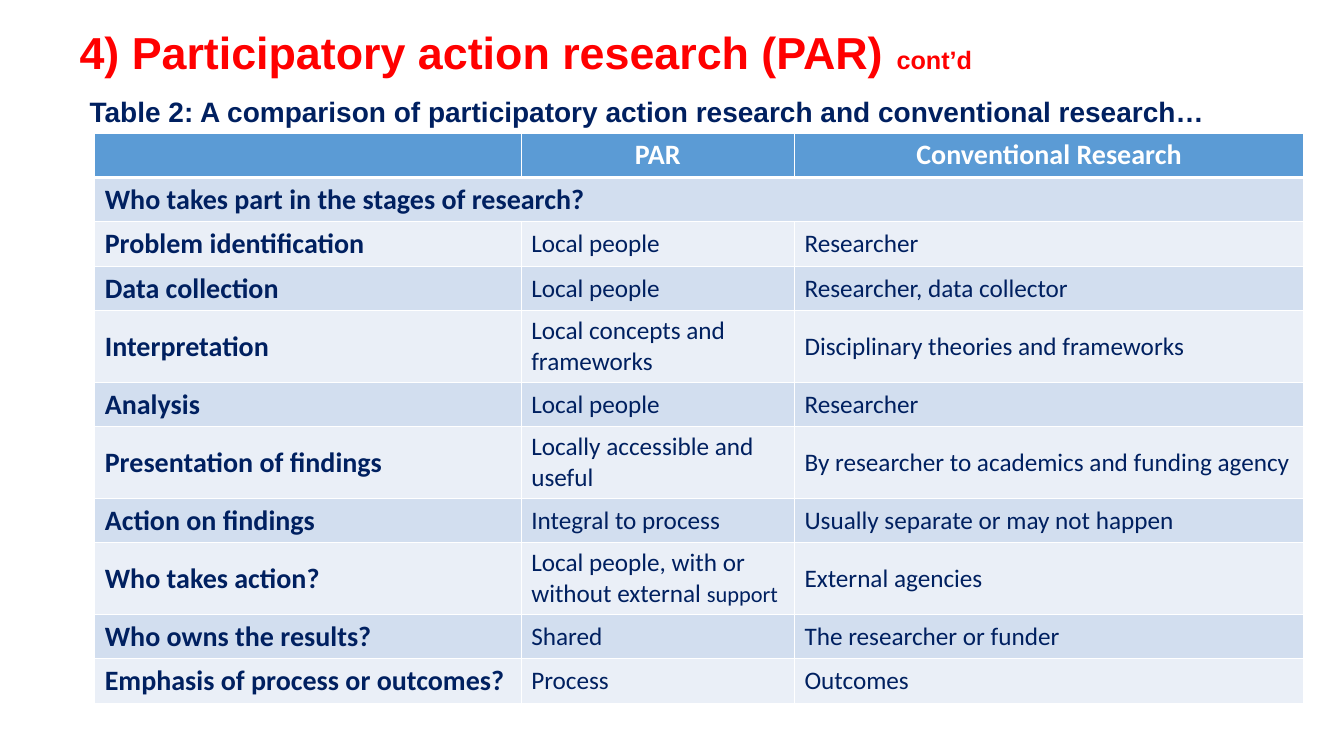
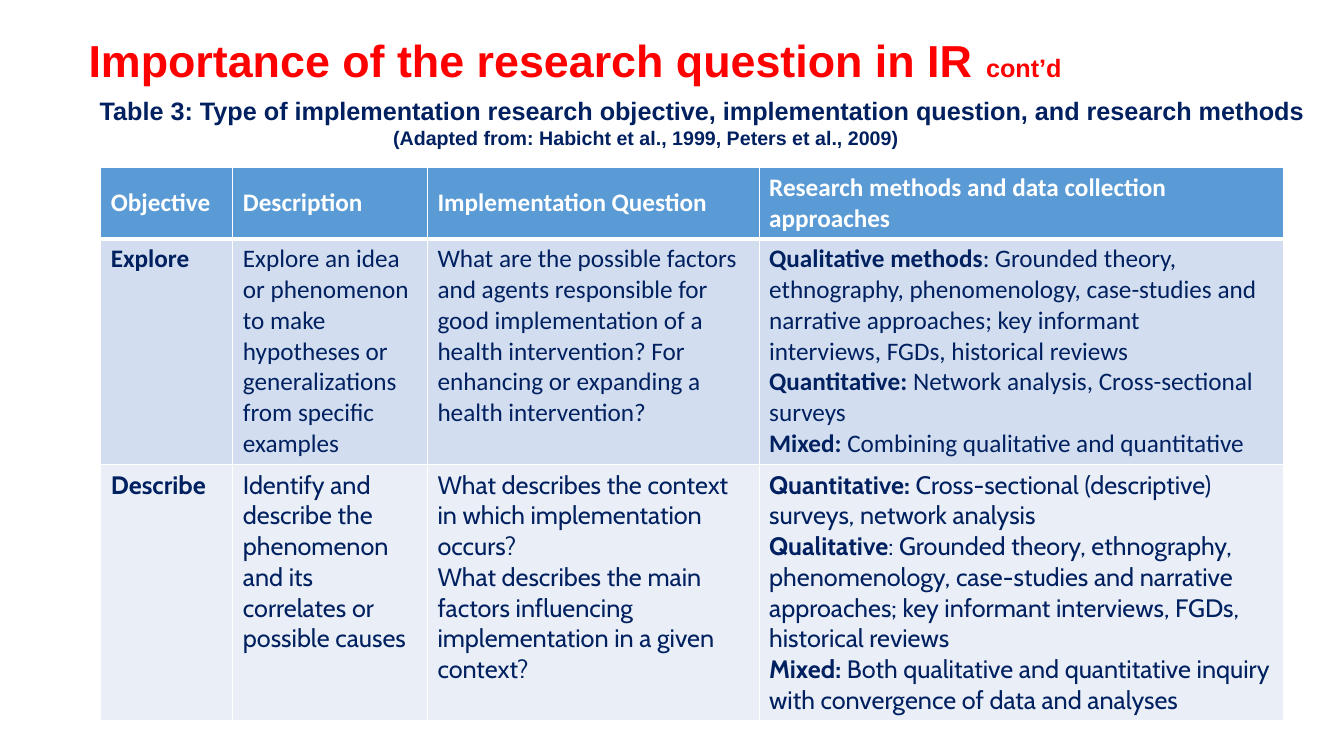
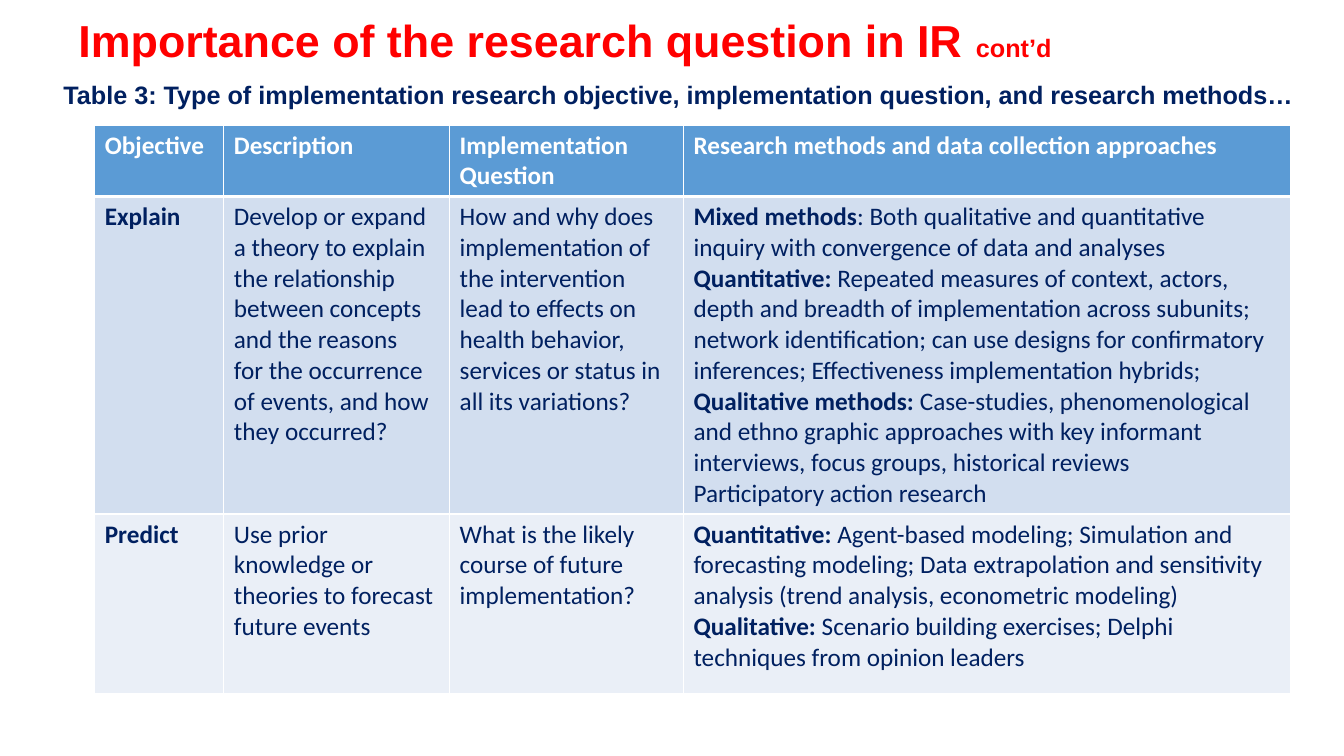
from dataclasses import dataclass, replace

from lxml import etree
from pptx import Presentation, util as u
from pptx.dml.color import RGBColor
from pptx.enum import text as t
from pptx.oxml.ns import qn


@dataclass(frozen=True)
class Style:
    size: float
    color: str
    font: str = "Calibri"
    bold: bool = False


class Theme:
    width, height = 13.33, 7.5
    white, navy, red = "FFFFFF", "002060", "FF0000"
    header_fill, bands = "5B9BD5", ("D2DEEF", "EAEFF7")
    thin, thick = 1, 3
    line_spacing = 0.9
    title = Style(32, red, "Arial", True)
    contd = replace(title, size=18)
    caption = Style(18, navy, "Arial", True)
    large_caption = replace(caption, size=20)
    source = replace(caption, size=14)
    header = Style(18, white, bold=True)
    large_header = replace(header, size=20)
    body = Style(18, navy)
    strong = replace(body, bold=True)
    stage = replace(strong, size=20)
    small = replace(body, size=16)


@dataclass(frozen=True)
class Box:
    left: float
    top: float
    width: float
    height: float

    def place(self):
        across, down = Theme.width / 100, Theme.height / 100
        return [u.Inches(length) for length in (
            self.left * across, self.top * down,
            self.width * across, self.height * down)]


def write(paragraph, content, style, marked=None):
    for i, span in enumerate(content.split("|")):
        look = marked if i % 2 else style
        for j, line in enumerate(span.split("\v")):
            if j:
                paragraph.add_line_break()
            if line:
                run = paragraph.add_run()
                run.text = line
                run.font.name, run.font.size = look.font, u.Pt(look.size)
                run.font.bold = look.bold
                run.font.color.rgb = RGBColor.from_string(look.color)


def add_text(slide, box, anchor):
    frame = slide.shapes.add_textbox(*box.place()).text_frame
    frame.word_wrap = True
    frame.vertical_anchor = anchor
    frame.paragraphs[0].line_spacing = Theme.line_spacing
    return frame


def add_title(slide, box, heading):
    frame = add_text(slide, box, t.MSO_ANCHOR.MIDDLE)
    write(frame.paragraphs[0], heading + " |cont’d", Theme.title, Theme.contd)


def add_caption(slide, box, caption, style=Theme.caption, source=None):
    frame = add_text(slide, box, t.MSO_ANCHOR.TOP)
    write(frame.paragraphs[0], caption, style)
    if source:
        credit = frame.add_paragraph()
        credit.line_spacing = Theme.line_spacing
        credit.space_before = u.Pt(2)
        credit._p.get_or_add_pPr().set("marL", str(u.Inches(2.91)))
        write(credit, source, Theme.source)


def paint_cell(cell, row):
    properties = cell._tc.get_or_add_tcPr()
    heavy = {0: "lnB", 1: "lnT"}.get(row)
    for side in ("lnL", "lnR", "lnT", "lnB"):
        points = Theme.thick if side == heavy else Theme.thin
        line = etree.SubElement(properties, qn("a:" + side), w=str(u.Pt(points)))
        fill = etree.SubElement(line, qn("a:solidFill"))
        etree.SubElement(fill, qn("a:srgbClr"), val=Theme.white)
    color = Theme.bands[(row - 1) % 2] if row else Theme.header_fill
    cell.fill.solid()
    cell.fill.fore_color.rgb = RGBColor.from_string(color)


def add_grid(slide, box, columns, heights, rows, style_of, anchor_of):
    frame = slide.shapes.add_table(len(rows), len(columns), *box.place())
    grid = frame.table
    grid.horz_banding = False
    for column, width in zip(grid.columns, columns):
        column.width = u.Inches(width)
    for row, height in zip(grid.rows, heights):
        row.height = u.Inches(height)
    for r, entries in enumerate(rows):
        for c in range(len(columns)):
            cell = grid.cell(r, c)
            paint_cell(cell, r)
            cell.vertical_anchor = anchor_of(r)
            if c < len(entries):
                style, marked = style_of(r, c)
                for i, part in enumerate(entries[c].split("\n")):
                    frame = cell.text_frame
                    paragraph = frame.add_paragraph() if i else frame.paragraphs[0]
                    write(paragraph, part, style, marked)
    return grid


def add_comparison(slide, box, columns, rows):
    def style_of(r, c):
        if r == 0:
            return Theme.large_header, None
        return (Theme.body if c else Theme.stage), Theme.small

    two_line_rows = (4, 6, 8)
    heights = [0.71 if r in two_line_rows else 0.44 for r in range(len(rows))]
    grid = add_grid(slide, box, columns, heights, rows, style_of,
                    lambda r: t.MSO_ANCHOR.MIDDLE if r else t.MSO_ANCHOR.TOP)
    for c in range(len(columns)):
        grid.cell(0, c).text_frame.paragraphs[0].alignment = t.PP_ALIGN.CENTER
    grid.cell(1, 0).merge(grid.cell(1, len(columns) - 1))


def add_objectives(slide, box, columns, heights, rows,
                   header_anchor=t.MSO_ANCHOR.TOP, last_font="Calibri"):
    def style_of(r, c):
        if r == 0:
            return Theme.header, None
        font = last_font if r == len(rows) else Theme.body.font
        strong = replace(Theme.strong, font=font)
        return (replace(Theme.body, font=font) if c else strong), strong

    add_grid(slide, box, columns, heights, [OBJECTIVE_HEADER] + rows, style_of,
             lambda r: t.MSO_ANCHOR.TOP if r else header_anchor)


COMPARISON = [
    ("", "PAR", "Conventional Research"),
    ("Who takes part in the stages of research?",),
    ("Problem identification", "Local people", "Researcher"),
    ("Data collection", "Local people", "Researcher, data collector"),
    ("Interpretation", "Local concepts and frameworks",
     "Disciplinary theories and frameworks"),
    ("Analysis", "Local people", "Researcher"),
    ("Presentation of findings", "Locally accessible and useful",
     "By researcher to academics and funding agency"),
    ("Action on findings", "Integral to process",
     "Usually separate or may not happen"),
    ("Who takes action?", "Local people, with or without external |support",
     "External agencies"),
    ("Who owns the results?", "Shared", "The researcher or funder"),
    ("Emphasis of process or outcomes?", "Process", "Outcomes"),
]

OBJECTIVE_HEADER = ("Objective", "Description", "Implementation Question",
                    "Research methods and data collection approaches")

EXPLORE_DESCRIBE = [
    ("Explore",
     "Explore an idea or phenomenon to make hypotheses or generalizations "
     "from specific examples",
     "What are the possible factors and agents responsible for good "
     "implementation of a\vhealth intervention? For enhancing or expanding a "
     "health intervention?",
     "|Qualitative methods|: Grounded theory, ethnography, phenomenology, "
     "case-studies and narrative approaches; key informant\vinterviews, FGDs, "
     "historical reviews\n"
     "|Quantitative: |Network analysis, Cross-sectional surveys\n"
     "|Mixed: |Combining qualitative and quantitative"),
    ("Describe",
     "Identify and describe the phenomenon and its correlates or possible causes",
     "What describes the context in which implementation occurs?\n"
     "What describes the main factors influencing implementation in a given "
     "context?",
     "|Quantitative:| Cross-sectional (descriptive) surveys, network analysis\n"
     "|Qualitative|: Grounded theory, ethnography, phenomenology, case-studies "
     "and narrative approaches; key informant interviews, FGDs, historical "
     "reviews\n"
     "|Mixed:| Both qualitative and quantitative inquiry with convergence of "
     "data and analyses"),
]

EXPLAIN_PREDICT = [
    ("Explain",
     "Develop or expand\va theory to explain\vthe relationship\vbetween "
     "concepts\vand the reasons\vfor the occurrence\vof events, and how\v"
     "they occurred?",
     "How and why does implementation of the intervention lead to effects on "
     "health behavior, services or status in all its variations?",
     "|Mixed methods|: Both qualitative and quantitative inquiry with "
     "convergence of data and analyses\n"
     "|Quantitative: |Repeated measures of context, actors, depth and breadth "
     "of implementation across subunits; network identification; can use "
     "designs for confirmatory inferences; Effectiveness implementation "
     "hybrids;\n"
     "|Qualitative methods: |Case-studies, phenomenological and ethno graphic "
     "approaches with key informant interviews, focus groups, historical "
     "reviews\nParticipatory action research"),
    ("Predict",
     "Use prior knowledge or theories to forecast future events",
     "What is the likely course of future implementation?",
     "|Quantitative:| Agent-based modeling; Simulation and forecasting "
     "modeling; Data extrapolation and sensitivity analysis (trend analysis, "
     "econometric modeling)\n"
     "|Qualitative:| Scenario building exercises; Delphi techniques from "
     "opinion leaders"),
]

QUESTION_HEADING = "Importance of the research question in IR"
METHODS_CAPTION = ("Table 3: Type of implementation research objective, "
                   "implementation question, and research methods")


def main():
    deck = Presentation()
    deck.slide_width = u.Inches(Theme.width)
    deck.slide_height = u.Inches(Theme.height)
    par, explore, explain = (
        deck.slides.add_slide(deck.slide_layouts[6]) for _ in range(3))

    add_comparison(par, Box(7.05, 17.6, 89.95, 75.33), (4.23, 2.71, 5.05),
                   COMPARISON)
    add_title(par, Box(5.18, 2.93, 79.29, 8.67),
              "4) Participatory action research (PAR)")
    add_caption(par, Box(5.93, 12.4, 86.42, 5.33),
                "Table 2: A comparison of participatory action research and "
                "conventional research…", Theme.large_caption)

    add_objectives(explore, Box(7.5, 22.13, 88, 73.2), (1.31, 1.93, 3.29, 5.2),
                   (0.71, 2.24, 2.54), EXPLORE_DESCRIBE,
                   t.MSO_ANCHOR.MIDDLE, "Cabin")
    add_caption(explore, Box(6.68, 12.4, 92.05, 7.87), METHODS_CAPTION,
                source="(Adapted from: Habicht et al., 1999, Peters et al., 2009)")
    add_title(explore, Box(5.85, 2.4, 82.75, 11.87), QUESTION_HEADING)

    add_objectives(explain, Box(7.05, 16.53, 88.97, 75.2),
                   (1.28, 2.24, 2.32, 6.02), (0.71, 3.15, 1.78),
                   EXPLAIN_PREDICT)
    add_caption(explain, Box(3.98, 10.27, 93.1, 6.13), METHODS_CAPTION + "…")
    add_title(explain, Box(5.1, 2.53, 82.75, 6.27), QUESTION_HEADING)

    deck.save("out.pptx")


if __name__ == "__main__":
    main()
